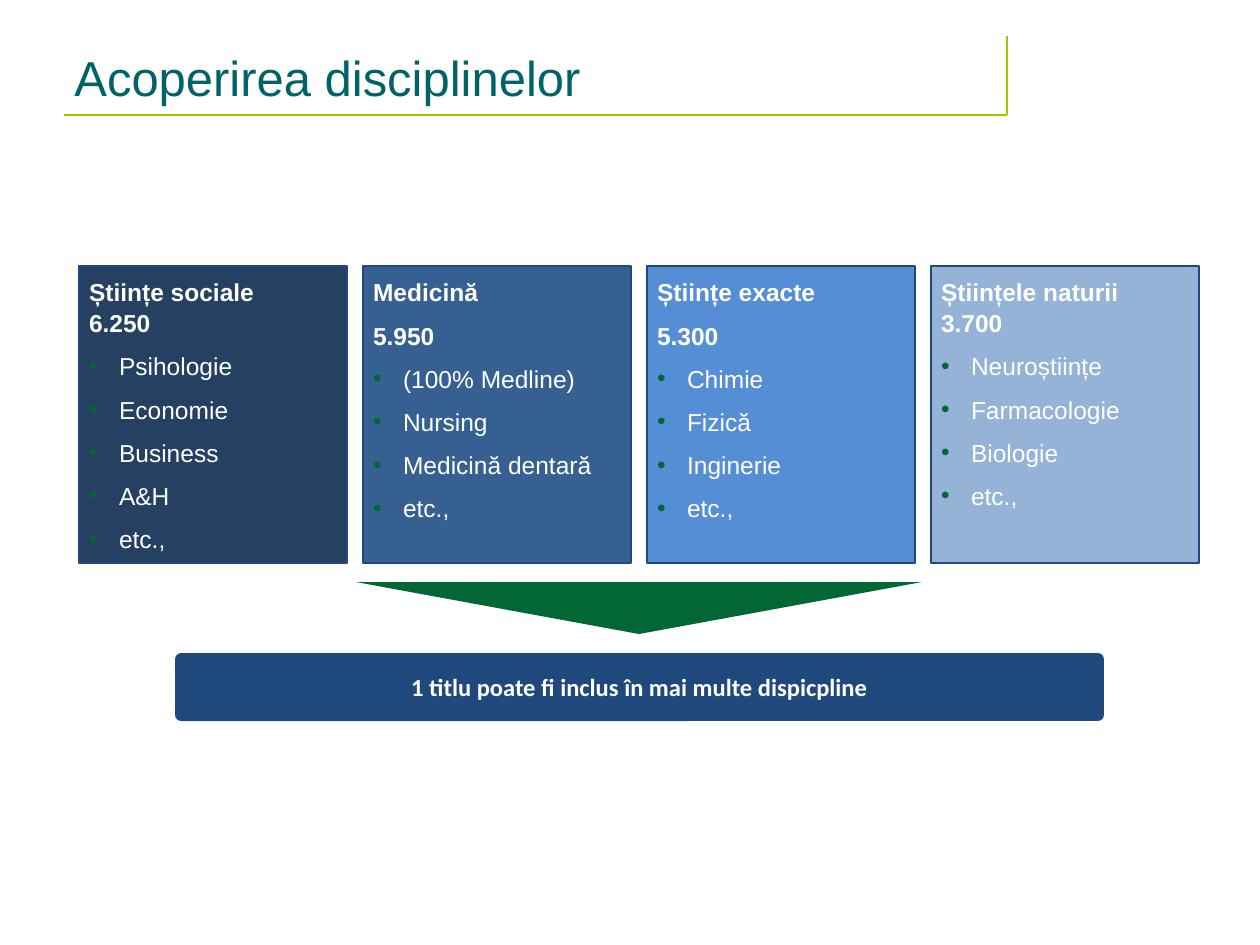
import pptx
import pptx.util
import pptx.dml.color
import pptx.oxml
import pptx.oxml.ns
import pptx.enum.shapes
import pptx.enum.text
import lxml.etree

PX = 914400 / 126
KIND = pptx.enum.shapes.MSO_SHAPE
ALIGN = pptx.enum.text.PP_ALIGN
ANCHOR = pptx.enum.text.MSO_ANCHOR
Pt = pptx.util.Pt
NAVY, GREEN, LIME, WHITE = "1F497D", "036635", "99CC00", "FFFFFF"


def px(*nums):
    return [round(n * PX) for n in nums]


def paint(part, tone):
    if hasattr(part, "solid"):
        part.solid()
        part = part.fore_color
    part.rgb = pptx.dml.color.RGBColor.from_string(tone)


deck = pptx.Presentation()
deck.slide_width, deck.slide_height = px(1260, 945)
slide = deck.slides.add_slide(deck.slide_layouts[6])
shapes = slide.shapes

# Title rules
for ends in [(1007, 36, 1007, 115), (64, 115, 1007, 115)]:
    rule = shapes.add_connector(pptx.enum.shapes.MSO_CONNECTOR.STRAIGHT, *px(*ends))
    rule.line.width = Pt(1)
    paint(rule.line.color, LIME)
    lxml.etree.SubElement(rule._element.spPr, pptx.oxml.ns.qn("a:effectLst"))

# Title
box = shapes.add_textbox(*px(62, 36, 925, 77))
frame = box.text_frame
frame.word_wrap = True
frame.vertical_anchor = ANCHOR.BOTTOM
para = frame.paragraphs[0]
para.text = "Acoperirea disciplinelor"
for key, val in {"name": "Arial", "size": Pt(28)}.items():
    setattr(para.font, key, val)
paint(para.font.color, "006366")

# Banner
bar = shapes.add_shape(KIND.ROUNDED_RECTANGLE, *px(175, 653, 929, 68))
bar.adjustments[0] = 0.09
bar.shadow.inherit = False
paint(bar.fill, NAVY)
bar.line.fill.background()
frame = bar.text_frame
frame.vertical_anchor = ANCHOR.MIDDLE
para = frame.paragraphs[0]
para.text = "1 titlu poate fi inclus în mai multe dispicpline"
para.alignment = ALIGN.CENTER
for key, val in {"name": "Calibri", "size": Pt(14), "bold": True}.items():
    setattr(para.font, key, val)
paint(para.font.color, WHITE)

# Arrow pointing down to the banner
wedge = shapes.add_shape(KIND.ISOSCELES_TRIANGLE, *px(356, 582, 566, 52))
wedge.rotation = 180
wedge.shadow.inherit = False
paint(wedge.fill, GREEN)
wedge.line.fill.background()

# Cards: fill, heads, bullet items
cards = [
    ("254061", ["Științe sociale\v6.250"],
     ["Psihologie", "Economie", "Business", "A&H", "etc.,"]),
    ("376092", ["Medicină", "5.950"],
     ["(100% Medline)", "Nursing", "Medicină dentară", "etc.,"]),
    ("558ED5", ["Științe exacte", "5.300"],
     ["Chimie", "Fizică", "Inginerie", "etc.,"]),
    ("95B3D7", ["Științele naturii\v3.700"],
     ["Neuroștiințe", "Farmacologie", "Biologie", "etc.,"]),
]
SPACE = pptx.oxml.ns.nsdecls("a")
BULLET = [
    f'<a:buClr {SPACE}><a:srgbClr val="{GREEN}"/></a:buClr>',
    f'<a:buFont {SPACE} typeface="Arial"/>',
    f'<a:buChar {SPACE} char="•"/>',
]
dent, inset = px(30, 10)

for col, (tone, heads, items) in enumerate(cards):
    card = shapes.add_shape(KIND.RECTANGLE, *px(79 + 284 * col, 266, 268, 297))
    card.shadow.inherit = False
    paint(card.fill, tone)
    paint(card.line.color, NAVY)
    card.line.width = Pt(0.75)
    frame = card.text_frame
    frame.word_wrap = True
    frame.vertical_anchor = ANCHOR.TOP
    for side in ("left", "top", "right", "bottom"):
        setattr(frame, "margin_" + side, inset)

    for row, text in enumerate(heads + items):
        head = row < len(heads)
        para = frame.add_paragraph() if row else frame.paragraphs[0]
        para.text = text
        para.alignment = ALIGN.LEFT
        para.line_spacing = 1.05
        if row:
            para.space_before = Pt(7)
        if not head:
            para.level = 1
            props = para._p.get_or_add_pPr()
            props.set("marL", str(dent))
            props.set("indent", str(-dent))
            for mark in BULLET:
                props.append(pptx.oxml.parse_xml(mark))
        for key, val in {"name": "Arial", "size": Pt(14), "bold": head}.items():
            setattr(para.font, key, val)
        paint(para.font.color, WHITE)

deck.save("out.pptx")
